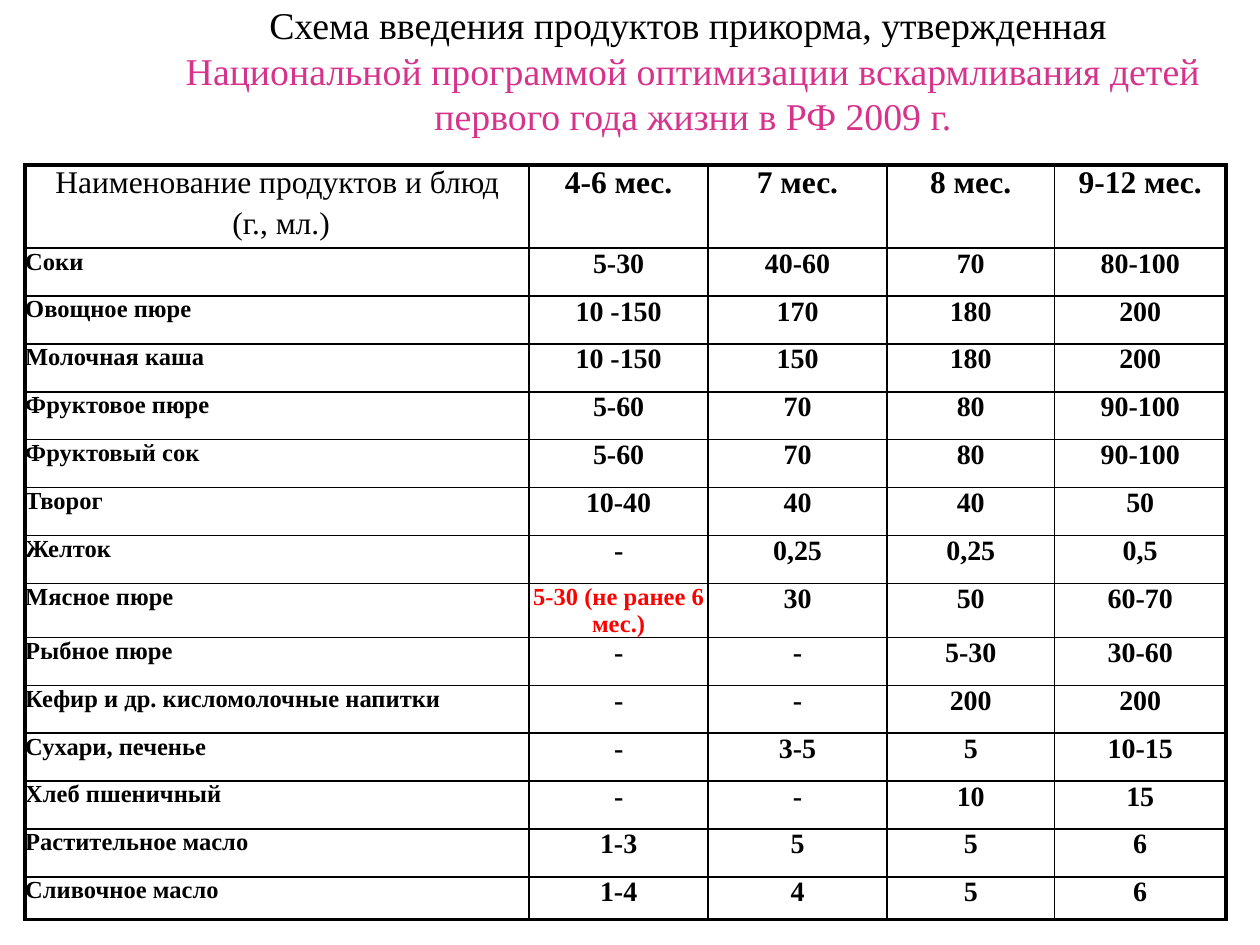
from dataclasses import dataclass
from typing import NamedTuple

from lxml import etree
from pptx import Presentation
from pptx.dml.color import RGBColor
from pptx.enum.text import MSO_ANCHOR, PP_ALIGN
from pptx.oxml.ns import qn
from pptx.util import Inches, Pt

LEFT, CENTER = PP_ALIGN.LEFT, PP_ALIGN.CENTER
TOP, MIDDLE = MSO_ANCHOR.TOP, MSO_ANCHOR.MIDDLE
PAGE_WIDTH, PAGE_HEIGHT = Inches(10), Inches(7.5)


@dataclass(frozen=True)
class Theme:
    font: str = "Times New Roman"
    ink: str = "000000"
    accent: str = "D6338C"
    warning: str = "FF0000"
    title_size: float = 21.6
    header_size: float = 18
    value_size: float = 16
    label_size: float = 14
    thin: float = 1
    thick: float = 2.25


THEME = Theme()


class TextStyle(NamedTuple):
    size: float
    bold: bool = True
    color: str = THEME.ink
    align: PP_ALIGN = CENTER


class Food(NamedTuple):
    name: str
    amounts: tuple[str, ...]


CORNER = TextStyle(THEME.header_size, bold=False)
HEADER = TextStyle(THEME.header_size)
LABEL = TextStyle(THEME.label_size, align=LEFT)
VALUE = TextStyle(THEME.value_size)
WARNING = TextStyle(THEME.label_size, color=THEME.warning)

TITLE = (
    ("Схема введения продуктов прикорма, утвержденная ", THEME.ink),
    ("Национальной программой оптимизации вскармливания детей "
     "первого года жизни в РФ 2009 г.", THEME.accent),
)
HEADINGS = ("Наименование продуктов и блюд\n (г., мл.)",
            "4-6 мес.", "7 мес.", "8 мес.", "9-12 мес.")
LATE_START = "5-30 (не ранее 6 мес.)"
FOODS = (
    Food("Соки", ("5-30", "40-60", "70", "80-100")),
    Food("Овощное пюре", ("10 -150", "170", "180", "200")),
    Food("Молочная каша", ("10 -150", "150", "180", "200")),
    Food("Фруктовое пюре", ("5-60", "70", "80", "90-100")),
    Food("Фруктовый сок", ("5-60", "70", "80", "90-100")),
    Food("Творог", ("10-40", "40", "40", "50")),
    Food("Желток", ("-", "0,25", "0,25", "0,5")),
    Food("Мясное пюре", (LATE_START, "30", "50", "60-70")),
    Food("Рыбное пюре", ("-", "-", "5-30", "30-60")),
    Food("Кефир и др. кисломолочные напитки", ("-", "-", "200", "200")),
    Food("Сухари, печенье", ("-", "3-5", "5", "10-15")),
    Food("Хлеб пшеничный", ("-", "-", "10", "15")),
    Food("Растительное масло", ("1-3", "5", "5", "6")),
    Food("Сливочное масло", ("1-4", "4", "5", "6")),
)
COLUMN_WIDTHS = (4, 1.42, 1.42, 1.33, 1.36)
ROW_HEIGHTS = (0.66, *[0.38] * (len(FOODS) - 1), 0.34)


def format_span(span, size: float, color: str, bold: bool) -> None:
    values = {"name": THEME.font, "size": Pt(size), "bold": bold}
    for name, value in values.items():
        setattr(span.font, name, value)
    span.font.color.rgb = RGBColor.from_string(color)


def add_title(page) -> None:
    box = page.shapes.add_textbox(int(PAGE_WIDTH * 0.1), Inches(0.21),
                                  int(PAGE_WIDTH * 0.9), Inches(0.69))
    frame = box.text_frame
    frame.word_wrap = True
    frame.vertical_anchor = MIDDLE
    para = frame.paragraphs[0]
    para.alignment = CENTER
    for index, (text, color) in enumerate(TITLE):
        if index:
            para.add_line_break()
        span = para.add_run()
        span.text = text
        format_span(span, THEME.title_size, color, bold=False)


def set_space_before(para, percent: int) -> None:
    space = etree.SubElement(para._p.get_or_add_pPr(), qn("a:spcBef"))
    etree.SubElement(space, qn("a:spcPct"), val=str(percent * 1000))


def set_borders(cell, widths: dict[str, float]) -> None:
    properties = cell._tc.get_or_add_tcPr()
    for index, (side, width) in enumerate(widths.items()):
        line = etree.Element(qn(f"a:ln{side}"), w=str(Pt(width)))
        fill = etree.SubElement(line, qn("a:solidFill"))
        etree.SubElement(fill, qn("a:srgbClr"), val=THEME.ink)
        properties.insert(index, line)


def fill_cell(cell, text: str, style: TextStyle) -> None:
    margins = dict.fromkeys(
        ("margin_left", "margin_top", "margin_right", "margin_bottom"), 0)
    for name, value in {**margins, "vertical_anchor": TOP}.items():
        setattr(cell, name, value)
    cell.fill.background()
    cell.text = text
    for para in cell.text_frame.paragraphs:
        para.alignment = style.align
        set_space_before(para, 20)
        for span in para.runs:
            format_span(span, style.size, style.color, style.bold)


def cell_style(row: int, column: int, text: str) -> TextStyle:
    if row == 0:
        return HEADER if column else CORNER
    if column == 0:
        return LABEL
    return WARNING if text == LATE_START else VALUE


def add_food_table(page) -> None:
    rows = (HEADINGS, *((food.name, *food.amounts) for food in FOODS))
    last_row, last_column = len(rows) - 1, len(HEADINGS) - 1
    table = page.shapes.add_table(
        len(rows), len(HEADINGS), Inches(0.2), Inches(1.31),
        Inches(sum(COLUMN_WIDTHS)), Inches(sum(ROW_HEIGHTS))).table
    table.first_row = table.horz_banding = False
    for column, width in zip(table.columns, COLUMN_WIDTHS):
        column.width = Inches(width)
    for row, height in zip(table.rows, ROW_HEIGHTS):
        row.height = Inches(height)
    for r, texts in enumerate(rows):
        for c, text in enumerate(texts):
            cell = table.cell(r, c)
            fill_cell(cell, text, cell_style(r, c, text))
            # Heavy frame outside, fine lines inside
            outer = {"L": c == 0, "R": c == last_column,
                     "T": r == 0, "B": r == last_row}
            set_borders(cell, {side: THEME.thick if edge else THEME.thin
                               for side, edge in outer.items()})


def main() -> None:
    deck = Presentation()
    deck.slide_width, deck.slide_height = PAGE_WIDTH, PAGE_HEIGHT
    page = deck.slides.add_slide(deck.slide_layouts[6])
    add_food_table(page)
    add_title(page)
    deck.save("out.pptx")


if __name__ == "__main__":
    main()
